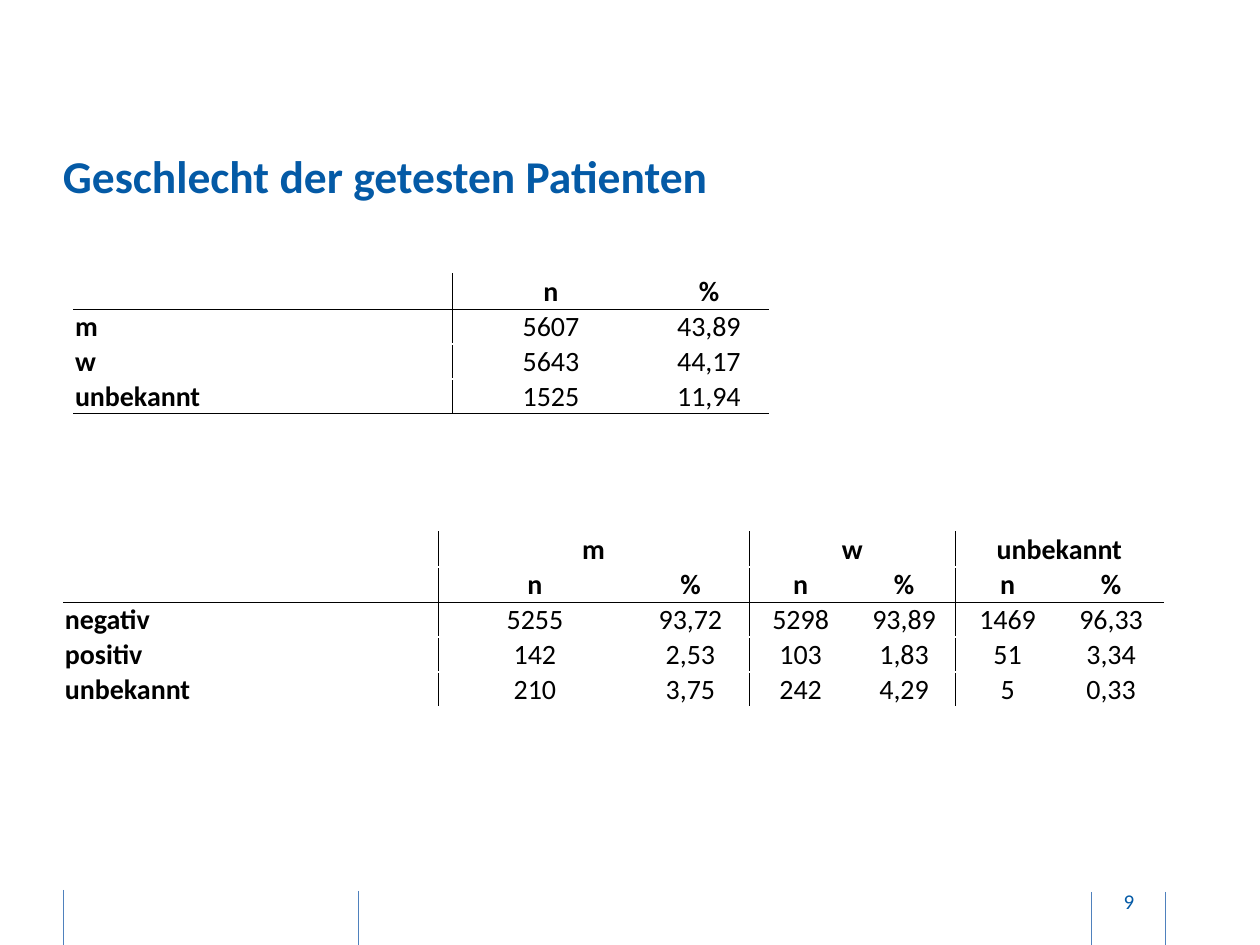
from lxml.etree import SubElement
from pptx import Presentation
from pptx.dml.color import RGBColor
from pptx.enum.shapes import MSO_CONNECTOR as Conn
from pptx.enum.text import MSO_ANCHOR as Anchor, PP_ALIGN as Align
from pptx.oxml.ns import qn
from pptx.util import Pt

PX = 7257  # EMU per px at 126 px to the inch
FONT = "Calibri"
COLORS = {"title": "045AA6", "text": "000000", "mark": "4F81BD"}

TITLE = "Geschlecht der getesten Patienten"
PAGE = "9"

# cols: widths; bars: columns with a line before; rules: rows with a line above
TABLES = [
    {"at": (74, 274), "cols": [378, 198, 118], "head": 1,
     "bars": [1], "rules": [1, 4], "spans": [],
     "rows": [["", "n", "%"],
              ["m", "5607", "43,89"],
              ["w", "5643", "44,17"],
              ["unbekannt", "1525", "11,94"]]},
    {"at": (64, 532), "cols": [374, 194, 117] + [103.5] * 4, "head": 2,
     "bars": [1, 3, 5], "rules": [2], "spans": [1, 3, 5],
     "rows": [["", "m", "", "w", "", "unbekannt", ""],
              ["", "n", "%", "n", "%", "n", "%"],
              ["negativ", "5255", "93,72", "5298", "93,89", "1469", "96,33"],
              ["positiv", "142", "2,53", "103", "1,83", "51", "3,34"],
              ["unbekannt", "210", "3,75", "242", "4,29", "5", "0,33"]]},
]
ROW = 35
MARKS = [(63, 890), (358, 891), (1092, 892), (1165, 892)]  # x, top
MARK_H = 56


def px(n):
    return round(n * PX)


def rgb(name):
    return RGBColor.from_string(COLORS[name])


def style(par, size, color, bold=False):
    for run in par.runs:
        run.font.name, run.font.size = FONT, Pt(size)
        run.font.bold, run.font.color.rgb = bold, rgb(color)


def add_text(slide, text, box, size, bold=False, align=Align.LEFT, pad=0):
    frame = slide.shapes.add_textbox(*map(px, box)).text_frame
    frame.word_wrap = True
    frame.vertical_anchor = Anchor.MIDDLE
    frame.margin_left = frame.margin_right = 0
    frame.margin_top = frame.margin_bottom = px(pad)
    frame.text = text
    par = frame.paragraphs[0]
    par.alignment = align
    style(par, size, "title", bold)


def add_edge(cell, side):
    line = SubElement(cell._tc.get_or_add_tcPr(), qn("a:ln" + side), w=str(Pt(0.5)))
    fill = SubElement(line, qn("a:solidFill"))
    SubElement(fill, qn("a:srgbClr"), val=COLORS["text"])


def fill_cell(cell, text, bold, align):
    cell.fill.background()
    cell.vertical_anchor = Anchor.BOTTOM
    cell.margin_left = cell.margin_right = cell.margin_top = px(1)
    cell.margin_bottom = 0
    cell.text = text
    par = cell.text_frame.paragraphs[0]
    par.alignment = align
    style(par, 16, "text", bold)
    if not text:  # keeps empty cells from stretching the row
        SubElement(par._p, qn("a:endParaRPr"), sz="1600")


def add_grid(slide, spec):
    rows, cols = spec["rows"], spec["cols"]
    box = (*spec["at"], sum(cols), ROW * len(rows))
    grid = slide.shapes.add_table(len(rows), len(cols), *map(px, box)).table
    grid.first_row = grid.horz_banding = False
    for col, width in zip(grid.columns, cols):
        col.width = px(width)
    for r, row in enumerate(rows):
        grid.rows[r].height = px(ROW)
        for c, text in enumerate(row):
            cell = grid.cell(r, c)
            edges = {"L": c in spec["bars"], "R": c + 1 in spec["bars"],
                     "T": r in spec["rules"], "B": r + 1 in spec["rules"]}
            for side, shown in edges.items():
                if shown:
                    add_edge(cell, side)
            fill_cell(cell, text, r < spec["head"] or c == 0,
                      Align.CENTER if c else Align.LEFT)
    for c in spec["spans"]:
        grid.cell(0, c).merge(grid.cell(0, c + 1))


def main():
    deck = Presentation()
    deck.slide_width, deck.slide_height = px(1260), px(945)
    slide = deck.slides.add_slide(deck.slide_layouts[6])

    # Footer marks and page number
    for x, top in MARKS:
        mark = slide.shapes.add_connector(
            Conn.STRAIGHT, px(x), px(top), px(x), px(top + MARK_H))
        mark.line.color.rgb, mark.line.width = rgb("mark"), Pt(0.5)
        SubElement(mark._element.spPr, qn("a:effectLst"))
    add_text(slide, PAGE, (1095, 876, 68, 50), 12, align=Align.CENTER, pad=6)

    # Title and tables
    add_text(slide, TITLE, (63, 115, 1100, 121), 26, bold=True)
    for spec in TABLES:
        add_grid(slide, spec)

    deck.save("out.pptx")


if __name__ == "__main__":
    main()
